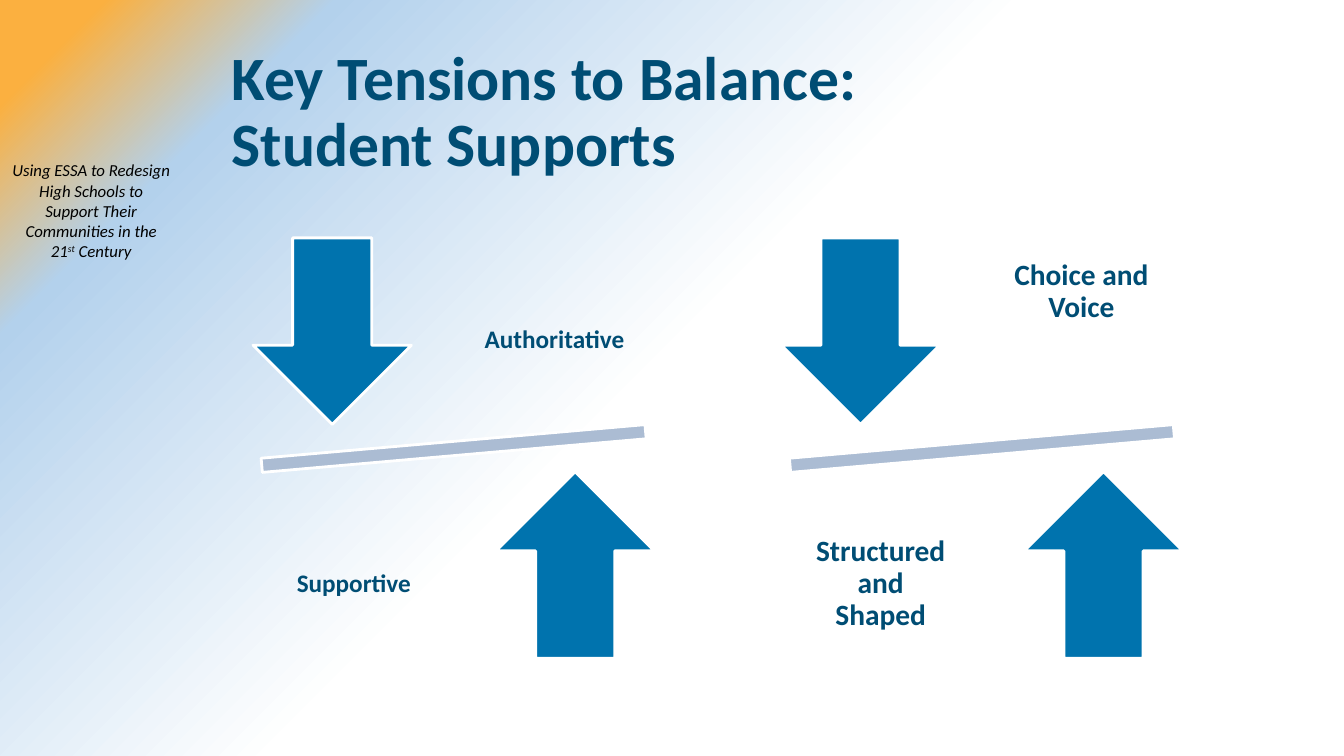
from dataclasses import dataclass
from typing import Any

from pptx import Presentation
from pptx.dml.color import RGBColor as Rgb
from pptx.enum.shapes import MSO_SHAPE as Kind
from pptx.enum.text import MSO_ANCHOR as Anchor, PP_ALIGN as Align
from pptx.oxml import parse_xml
from pptx.oxml.ns import nsdecls, qn
from pptx.util import Inches, Pt


@dataclass(frozen=True)
class Theme:
    """Colours, font and type sizes of the slide."""
    font: str = "Calibri"
    ink: str = "004D74"
    black: str = "000000"
    white: str = "FFFFFF"
    arrow: str = "0073AE"
    beam: str = "ABBCD3"
    sky: str = "B3D1EC"
    sun: str = "FBB040"
    head: int = 44
    large: int = 21
    small: int = 18
    note: int = 12
    edge: int = 2


@dataclass(frozen=True)
class Box:
    """A place on the slide in inches."""
    left: float
    top: float
    width: float
    height: float


@dataclass(frozen=True)
class Part:
    """A solid part of a balance, placed from its left edge."""
    kind: Kind
    box: Box
    fill: str
    turn: float = 0


@dataclass(frozen=True)
class Label:
    """The words beside an arrow."""
    text: str
    box: Box


@dataclass(frozen=True)
class Scale:
    """A balance with two opposed labels."""
    left: float
    size: int
    pad: float
    labels: tuple[Label, Label]


THEME = Theme()
PARTS = (
    Part(Kind.MATH_MINUS, Box(0, 4.15, 5.2, 0.6), THEME.beam, 355),
    Part(Kind.DOWN_ARROW, Box(0.61, 2.36, 1.57, 1.85), THEME.arrow),
    Part(Kind.UP_ARROW, Box(3.02, 4.68, 1.57, 1.85), THEME.arrow),
)
SCALES = (
    Scale(1.9, THEME.small, 0.14, (
        Label("Authoritative", Box(2.76, 2.4, 1.68, 1.95)),
        Label("Supportive", Box(0.77, 4.82, 1.68, 1.95)))),
    Scale(7.14, THEME.large, 0.15, (
        Label("Choice and Voice", Box(2.75, 1.92, 1.67, 1.95)),
        Label("Structured and Shaped", Box(0.76, 4.82, 1.67, 1.95)))),
)


def apply(item: Any, form: dict[str, Any]) -> None:
    """Set each named value on the item."""
    for name, value in form.items():
        setattr(item, name, value)


def place(box: Box, shift: float = 0) -> tuple[int, ...]:
    """Turn a box into lengths, moved right by the shift."""
    return tuple(Inches(n) for n in
                 (box.left + shift, box.top, box.width, box.height))


def paint(slide: Any) -> None:
    """Fill the background with the corner glow."""
    stops = ((0, THEME.white, ""), (51, THEME.white, ""),
             (84, THEME.sky, '<a:alpha val="50000"/>'), (95, THEME.sun, ""))
    marks = "".join(
        f'<a:gs pos="{at * 1000}"><a:srgbClr val="{tint}">{extra}</a:srgbClr></a:gs>'
        for at, tint, extra in stops)
    slide.background.fill.solid()
    back = slide.element.find(f".//{qn('p:bgPr')}")
    back.replace(back[0], parse_xml(
        f'<a:gradFill {nsdecls("a")} rotWithShape="1"><a:gsLst>{marks}</a:gsLst>'
        '<a:path path="circle"><a:fillToRect l="100000" t="100000"/></a:path>'
        '</a:gradFill>'))


def write(slide: Any, text: str, box: Box, size: int, shift: float = 0,
          pad: tuple[float, float] = (0.1, 0.05), tint: str = THEME.ink,
          align: Align = Align.CENTER, anchor: Anchor = Anchor.MIDDLE,
          space: float = 0.9, **style: bool) -> Any:
    """Add a wrapped text box and return its paragraph."""
    frame = slide.shapes.add_textbox(*place(box, shift)).text_frame
    side, end = (Inches(n) for n in pad)
    apply(frame, {"word_wrap": True, "vertical_anchor": anchor,
                  "margin_left": side, "margin_right": side,
                  "margin_top": end, "margin_bottom": end})
    para = frame.paragraphs[0]
    apply(para, {"text": text, "alignment": align, "line_spacing": space})
    apply(para.font, {"name": THEME.font, "size": Pt(size), **style})
    para.font.color.rgb = Rgb.from_string(tint)
    return para


def draw(slide: Any, part: Part, shift: float) -> None:
    """Add one solid part with a white edge."""
    shape = slide.shapes.add_shape(part.kind, *place(part.box, shift))
    shape.rotation = part.turn
    shape.shadow.inherit = False
    shape.fill.solid()
    shape.fill.fore_color.rgb = Rgb.from_string(part.fill)
    shape.line.color.rgb = Rgb.from_string(THEME.white)
    shape.line.width = Pt(THEME.edge)


def main() -> None:
    """Build the slide and save it."""
    deck = Presentation()
    apply(deck, {"slide_width": Inches(13.33), "slide_height": Inches(7.5)})
    slide = deck.slides.add_slide(deck.slide_layouts[6])
    paint(slide)
    note = write(slide, "Using ESSA to Redesign High Schools to Support Their "
                 "Communities in the 21", Box(0.02, 1.54, 1.77, 1.11),
                 THEME.note, tint=THEME.black, anchor=Anchor.TOP, space=1.0,
                 italic=True)
    for text, lift in (("st", "30000"), (" Century", "0")):
        run = note.add_run()
        run.text = text
        run._r.get_or_add_rPr().set("baseline", lift)
    write(slide, "Key Tensions to Balance:\vStudent Supports",
          Box(2.2, 0.4, 10.83, 1.45), THEME.head, align=Align.LEFT, bold=True)
    for scale in SCALES:
        for part in PARTS:
            draw(slide, part, scale.left)
        for label in scale.labels:
            write(slide, label.text, label.box, scale.size, scale.left,
                  (scale.pad, scale.pad), bold=True)
    deck.save("out.pptx")


if __name__ == "__main__":
    main()
